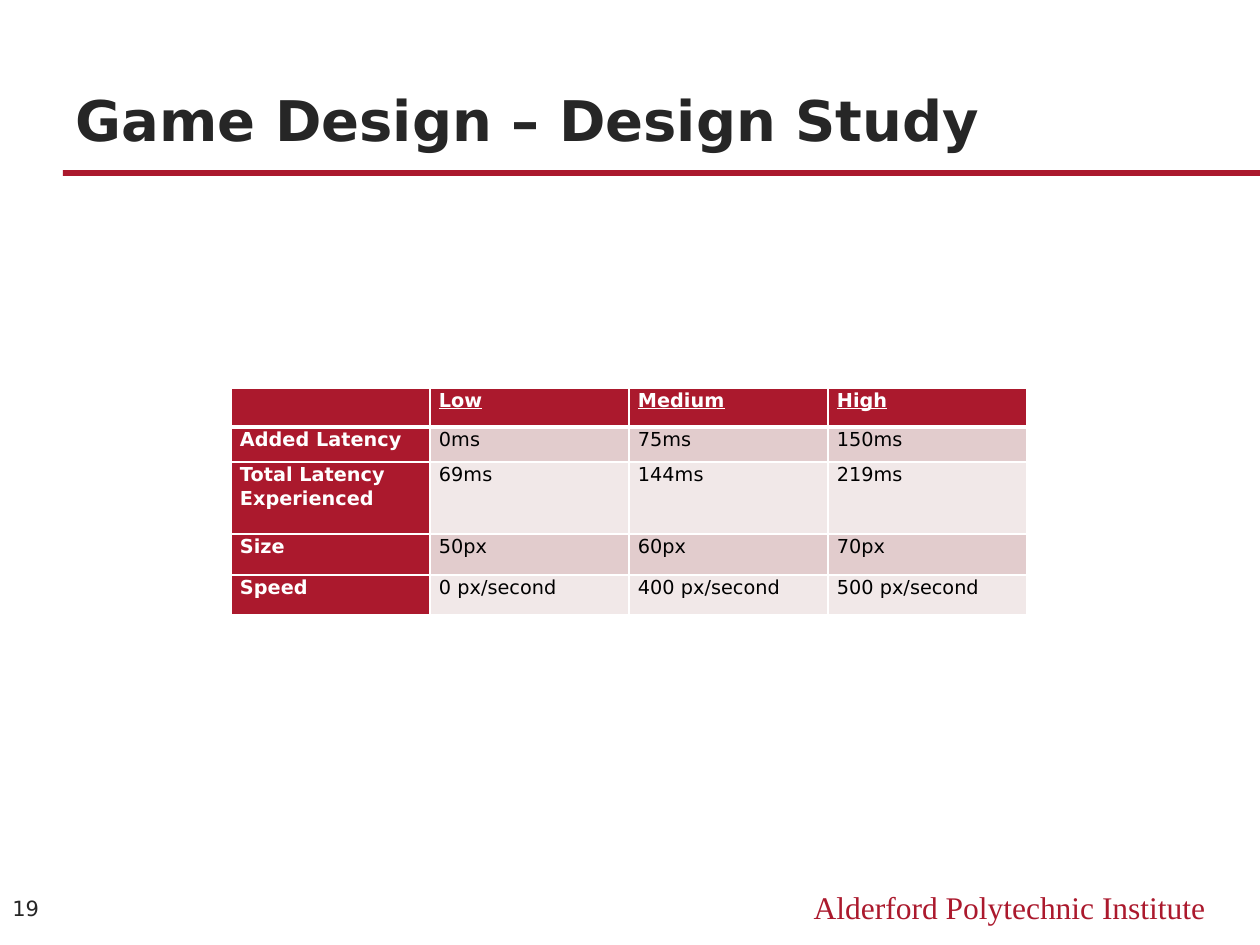
import pptx
import pptx.dml.color
import pptx.enum.shapes
import pptx.enum.text
import pptx.oxml
import pptx.oxml.ns
import pptx.util

RGBColor = pptx.dml.color.RGBColor
ALIGN = pptx.enum.text.PP_ALIGN
ANCHOR = pptx.enum.text.MSO_ANCHOR

CRIMSON = RGBColor(0xAB, 0x19, 0x2D)
CHARCOAL = RGBColor(0x26, 0x26, 0x26)
WHITE = RGBColor(0xFF, 0xFF, 0xFF)
BLACK = RGBColor(0, 0, 0)
ROSE = RGBColor(0xE2, 0xCC, 0xCD)
PALE_ROSE = RGBColor(0xF1, 0xE8, 0xE8)

PX_PER_INCH = 126
SANS = "DejaVu Sans"
SERIF = "Times New Roman"

LEVELS = [
    ["", "Low", "Medium", "High"],
    ["Added Latency", "0ms", "75ms", "150ms"],
    ["Total Latency Experienced", "69ms", "144ms", "219ms"],
    ["Size", "50px", "60px", "70px"],
    ["Speed", "0 px/second", "400 px/second", "500 px/second"],
]
ROW_HEIGHTS = [39, 35, 72, 41, 40]
COLUMN_WIDTH = 199


def px(length):
    return pptx.util.Emu(round(length * pptx.util.Inches(1) / PX_PER_INCH))


def write(frame, text, *, size, color, font=SANS, bold=False, underline=False,
          align=ALIGN.LEFT, anchor=ANCHOR.TOP, line_spacing=None):
    frame.word_wrap = True
    frame.vertical_anchor = anchor
    paragraph = frame.paragraphs[0]
    paragraph.alignment = align
    paragraph.line_spacing = line_spacing
    run = paragraph.add_run()
    run.text = text
    run.font.name = font
    run.font.size = pptx.util.Pt(size)
    run.font.bold = bold
    run.font.underline = underline
    run.font.color.rgb = color


def add_text(slide, box, text, **style):
    frame = slide.shapes.add_textbox(*map(px, box)).text_frame
    write(frame, text, **style)


def set_title(slide, box, text):
    title = slide.shapes.title
    title.left, title.top, title.width, title.height = map(px, box)
    title.text_frame.auto_size = pptx.enum.text.MSO_AUTO_SIZE.NONE
    write(title.text_frame, text, size=32, color=CHARCOAL, bold=True,
          anchor=ANCHOR.BOTTOM)


def add_rule(slide, box):
    rule = slide.shapes.add_shape(
        pptx.enum.shapes.MSO_SHAPE.RECTANGLE, *map(px, box))
    rule.shadow.inherit = False
    rule.fill.solid()
    rule.fill.fore_color.rgb = CRIMSON
    rule.line.fill.background()


def set_borders(cell, widths):
    """Draw white borders; widths maps side letters to points."""
    properties = cell._tc.get_or_add_tcPr()
    for position, (side, width) in enumerate(widths.items()):
        border = pptx.oxml.parse_xml(
            f'<a:ln{side} {pptx.oxml.ns.nsdecls("a")} w="{pptx.util.Pt(width)}">'
            f'<a:solidFill><a:srgbClr val="{WHITE}"/></a:solidFill></a:ln{side}>')
        properties.insert(position, border)


def format_cell(cell, text, row, column):
    is_header = row == 0 or column == 0
    cell.margin_left = cell.margin_right = px(9)
    cell.margin_top = cell.margin_bottom = 0
    cell.fill.solid()
    if is_header:
        cell.fill.fore_color.rgb = CRIMSON
    else:
        cell.fill.fore_color.rgb = ROSE if row % 2 else PALE_ROSE
    set_borders(cell, {"L": 1, "R": 1, "T": 3 if row == 1 else 1,
                       "B": 3 if row == 0 else 1})
    write(cell.text_frame, text, size=11, bold=is_header, underline=row == 0,
          color=WHITE if is_header else BLACK, line_spacing=1.07)


def add_levels_table(slide, left, top):
    column_count = len(LEVELS[0])
    table = slide.shapes.add_table(
        len(LEVELS), column_count, px(left), px(top),
        px(COLUMN_WIDTH * column_count), px(sum(ROW_HEIGHTS))).table
    for column in table.columns:
        column.width = px(COLUMN_WIDTH)
    for row, (height, texts) in enumerate(zip(ROW_HEIGHTS, LEVELS)):
        table.rows[row].height = px(height)
        for column, text in enumerate(texts):
            format_cell(table.cell(row, column), text, row, column)


def main():
    deck = pptx.Presentation()
    deck.slide_width, deck.slide_height = px(1260), px(945)
    slide = deck.slides.add_slide(deck.slide_layouts.get_by_name("Title Only"))
    add_rule(slide, (63, 170, 1197, 6))
    add_text(slide, (756, 882, 462, 50), "Alderford Polytechnic Institute",
             size=18, color=CRIMSON, font=SERIF, align=ALIGN.RIGHT)
    set_title(slide, (63, 48, 1134, 111), "Game Design – Design Study")
    add_levels_table(slide, 231, 388)
    add_text(slide, (0, 881, 63, 54), "19", size=12, color=CHARCOAL,
             anchor=ANCHOR.MIDDLE)
    deck.save("out.pptx")


if __name__ == "__main__":
    main()
